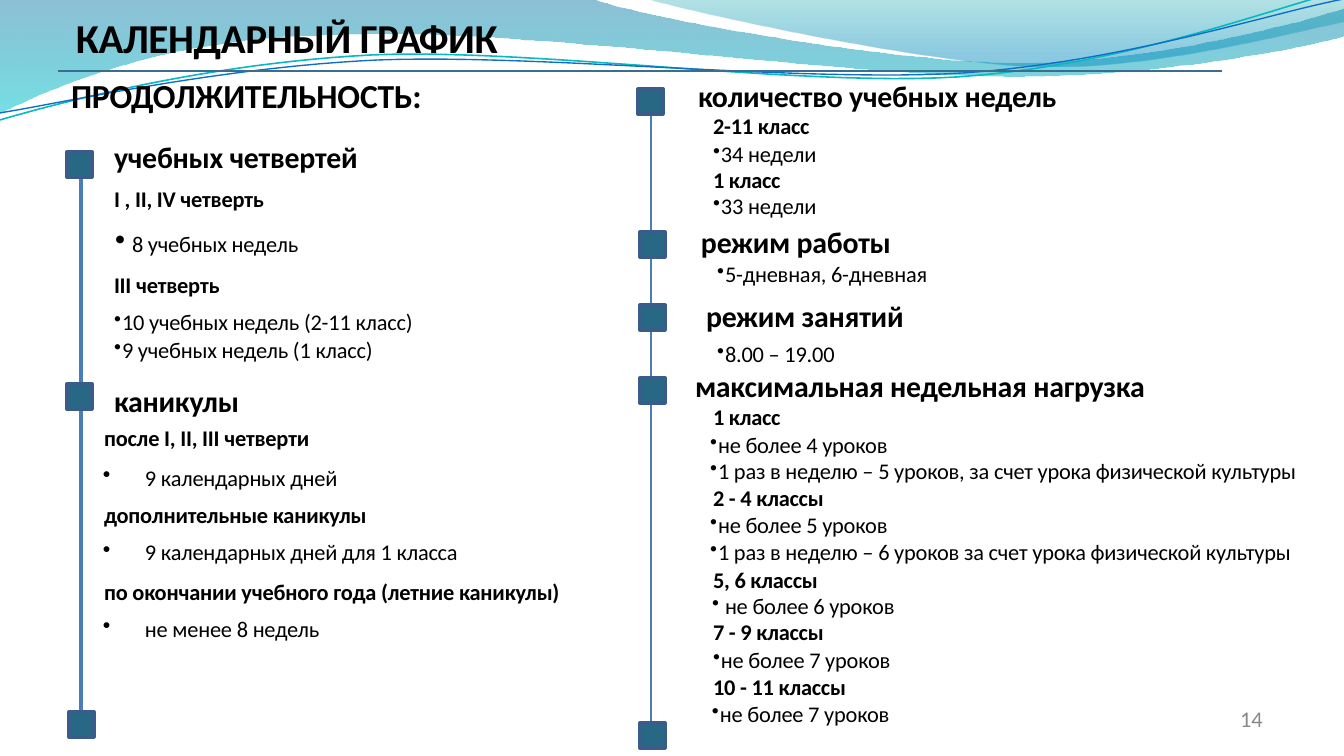
"""Build the school calendar slide."""
from dataclasses import dataclass
from itertools import pairwise

from lxml import etree
from pptx import Presentation
from pptx import util as u
from pptx.dml.color import RGBColor
from pptx.enum import shapes, text
from pptx.oxml.ns import qn


@dataclass(frozen=True)
class Theme:
    """Colours, font and type sizes."""
    font: str = "Calibri"
    ink: str = "000000"
    grey: str = "898989"
    rule: str = "3A6E8E"
    rail: str = "4A7EBB"
    box: str = "276885"
    edge: str = "385D8A"
    teal: str = "0AB8BF"
    blue: str = "0F6FC6"
    band: tuple = ((0, "0074A1", 45), (1, "00C6CF", 55))
    crest: tuple = ((0, "00A1A9", 30), (0.8, "008BBF", 45))
    title: int = 22
    lead: int = 18
    head: int = 16
    body: int = 12


T = Theme()
SCALE = 914400 / 134.4
SIDE = 25

BAND = [(0, 0), [(591, -1)],
        [(640, 17), (892, 63), (1019, 63)], [(1146, 63), (1288, 26), (1344, 9)],
        [(1345, 36)], [(1321, 44), (1169, 77), (1003, 77)],
        [(836, 75), (513, 28), (345, 35)], [(173, 36), (62, 83), (-1, 114)]]
CREST = [(644, -1), [(684, 11), (917, 62), (1034, 66)],
         [(1150, 70), (1292, 32), (1344, 22)], [(1344, 0)]]
TEAL = [(0, 120), [(65, 101), (212, 63), (372, 55)],
        [(532, 48), (796, 87), (957, 77)], [(1120, 66), (1262, 12), (1341, -9)]]
BLUE = [(0, 113), [(63, 103), (220, 67), (380, 60)],
        [(542, 54), (802, 83), (964, 73)], [(1124, 62), (1271, 13), (1344, -1)]]


def px(n):
    """Turn px into EMU."""
    return u.Emu(round(n * SCALE))


def rgb(code):
    """Turn a hex code into a colour."""
    return RGBColor.from_string(code)


def trace(steps, count=24):
    """Turn straight and cubic steps into points."""
    spot = steps[0]
    dots = [spot]
    for step in steps[1:]:
        if len(step) == 1:
            dots += step
        else:
            hull = [spot, *step]
            for i in range(1, count + 1):
                t = i / count
                mix = ((1 - t) ** 3, 3 * t * (1 - t) ** 2, 3 * t * t * (1 - t), t ** 3)
                dots.append(tuple(sum(m * p[a] for m, p in zip(mix, hull)) for a in (0, 1)))
        spot = step[-1]
    return [(px(x), px(y)) for x, y in dots]


def wave(slide, steps, stops=None, color=None, width=1):
    """Draw a curved band with a gradient, or a curved line."""
    first, *rest = trace(steps)
    pen = slide.shapes.build_freeform(*first)
    pen.add_line_segments(rest, close=bool(stops))
    shape = pen.convert_to_shape()
    shape.shadow.inherit = False
    if not stops:
        shape.fill.background()
        shape.line.color.rgb = rgb(color)
        shape.line.width = u.Pt(width)
        return
    shape.line.fill.background()
    shape.fill.gradient()
    shape.fill.gradient_angle = 270
    for stop, (place, code, _) in zip(shape.fill.gradient_stops, stops):
        stop.position = place
        stop.color.rgb = rgb(code)
    for node, (_, _, alpha) in zip(shape.element.spPr.iter(qn("a:srgbClr")), stops):
        etree.SubElement(node, qn("a:alpha"), val=str(alpha * 1000))


def line(slide, start, end, color, width):
    """Draw a straight line."""
    link = slide.shapes.add_connector(
        shapes.MSO_CONNECTOR.STRAIGHT, *map(px, start), *map(px, end))
    link.line.color.rgb = rgb(color)
    link.line.width = u.Pt(width)
    etree.SubElement(link.element.spPr, qn("a:effectLst"))


def rail(slide, x, spots, width):
    """Draw square markers joined by a vertical line."""
    for (_, top), (_, low) in pairwise(spots):
        line(slide, (x, top + SIDE), (x, low), T.rail, width)
    for left, top in spots:
        box = slide.shapes.add_shape(
            shapes.MSO_SHAPE.RECTANGLE, px(left), px(top), px(SIDE), px(SIDE))
        box.shadow.inherit = False
        box.fill.solid()
        box.fill.fore_color.rgb = rgb(T.box)
        box.line.color.rgb = rgb(T.edge)
        box.line.width = u.Pt(2)


def frame(slide, left, top, width, height, anchor=text.MSO_ANCHOR.TOP):
    """Add an empty text frame."""
    area = slide.shapes.add_textbox(px(left), px(top), px(width), px(height)).text_frame
    area.word_wrap = True
    area.vertical_anchor = anchor
    area.margin_left = area.margin_right = area.margin_bottom = 0
    area.margin_top = px(1)
    return area


def write(area, words, size=T.body, bold=False, color=T.ink, left=1, hang=0,
          before=0, pitch=None, dot=92, track=-10):
    """Add one paragraph; a hang gives it a bullet."""
    para = area.paragraphs[0]
    if para.runs:
        para = area.add_paragraph()
    para.space_before = u.Pt(before)
    if pitch:
        para.line_spacing = u.Pt(pitch)
    props = para._p.get_or_add_pPr()
    props.set("marL", str(px(left)))
    props.set("indent", str(px(-hang)))
    if hang:
        etree.SubElement(props, qn("a:buSzPct"), val=str(dot * 1000))
        etree.SubElement(props, qn("a:buChar"), char="•")
    run = para.add_run()
    run.text = words
    run.font.name = T.font
    run.font.size = u.Pt(size)
    run.font.bold = bold
    run.font.color.rgb = rgb(color)
    run._r.get_or_add_rPr().set("spc", str(track))


def terms(slide):
    """Write the left column on terms and holidays."""
    area = frame(slide, 70, 74, 499, 579)

    def head(words, before):
        write(area, words, size=T.head, bold=True, left=44, before=before)

    def sub(words, left, before):
        write(area, words, bold=True, left=left, before=before)

    def item(words, before, left=75, hang=42, dot=100):
        write(area, words, left=left, hang=hang, before=before, dot=dot)

    write(area, "ПРОДОЛЖИТЕЛЬНОСТЬ:", size=T.lead, bold=True, before=1)
    head("учебных четвертей", 12.6)
    sub("I , II, IV четверть", 44, 5.5)
    item("8 учебных недель", 9.6, left=62, hang=17, dot=133)
    sub("III четверть", 44, 7.7)
    item("10 учебных недель (2-11 класс)", 5.5, left=52, hang=8, dot=92)
    item("9 учебных недель (1 класс)", 0.5, left=52, hang=8, dot=92)
    head("каникулы", 10.4)
    sub("после I, II, III четверти", 34, 3.5)
    item("9 календарных дней", 6.7)
    sub("дополнительные каникулы", 34, 5.5)
    item("9 календарных дней для 1 класса", 5.5)
    sub("по окончании учебного года (летние каникулы)", 34, 6.7)
    item("не менее 8 недель", 5.5)


def load(slide):
    """Write the right column on weeks, hours and load."""
    area = frame(slide, 694, 78, 618, 661)

    def head(words, left, before, pitch=None):
        write(area, words, size=T.head, bold=True, left=left, before=before, pitch=pitch)

    def sub(words, pitch=14.2, before=0):
        write(area, words, bold=True, left=19, pitch=pitch, before=before)

    def item(words, left=24, before=0, pitch=14.3, hang=8):
        write(area, words, left=left, hang=hang, before=before, pitch=pitch)

    head("количество учебных недель", 4, 1, 18.4)
    sub("2-11 класс", 13.7)
    item("34 недели", 27, 0.7, 14.2)
    sub("1 класс", 13.9)
    item("33 недели", 27, 0, 14.2)
    head("режим работы", 7, 2.5)
    item("5-дневная, 6-дневная", 31, 0.1, None)
    head("режим занятий", 12, 5.8)
    item("8.00 – 19.00", 31, 3.5, None)
    head("максимальная недельная нагрузка", 1, 0.6, 19.1)
    sub("1 класс", 14.3)
    item("не более 4 уроков", before=0.5)
    item("1 раз в неделю – 5 уроков, за счет урока физической культуры", pitch=14.1)
    sub("2 - 4 классы")
    item("не более 5 уроков", before=0.5)
    item("1 раз в неделю – 6 уроков за счет урока физической культуры")
    sub("5, 6 классы", 14.3, 0.5)
    item("не более 6 уроков", 31, 0, 14.1, hang=13)
    sub("7 - 9 классы")
    item("не более 7 уроков", 27, 0.5)
    sub("10 - 11 классы", 14.3)
    write(area, "14", color=T.grey, left=546, before=3.1, track=0)
    last = frame(slide, 711, 699, 185, 30)
    write(last, "не более 7 уроков", left=9, hang=8, before=1)


def main():
    """Build and save the slide."""
    deck = Presentation()
    deck.slide_width, deck.slide_height = px(1344), px(756)
    slide = deck.slides.add_slide(deck.slide_layouts[6])
    wave(slide, BAND, stops=T.band)
    wave(slide, CREST, stops=T.crest)
    wave(slide, TEAL, color=T.teal, width=0.85)
    wave(slide, BLUE, color=T.blue, width=0.75)
    title = frame(slide, 75, 11, 433, 51, text.MSO_ANCHOR.BOTTOM)
    write(title, "КАЛЕНДАРНЫЙ ГРАФИК", size=T.title, bold=True, before=1, track=-20)
    terms(slide)
    line(slide, (58, 71), (1222, 71), T.rule, 1.25)
    rail(slide, 81, [(67, 152), (67, 384), (69, 712)], 1.83)
    load(slide)
    rail(slide, 651, [(638, 89), *((640, y) for y in (232, 305, 378, 723))], 0.75)
    deck.save("out.pptx")


if __name__ == "__main__":
    main()
